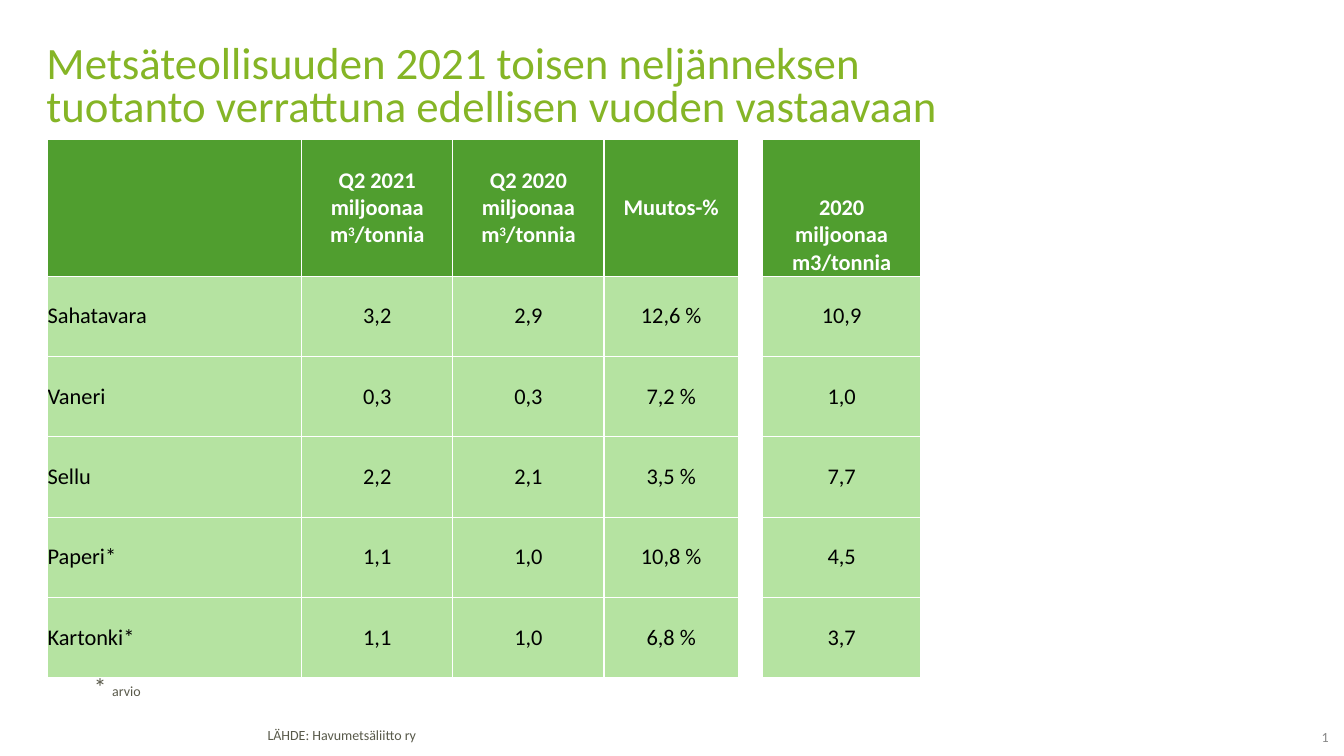
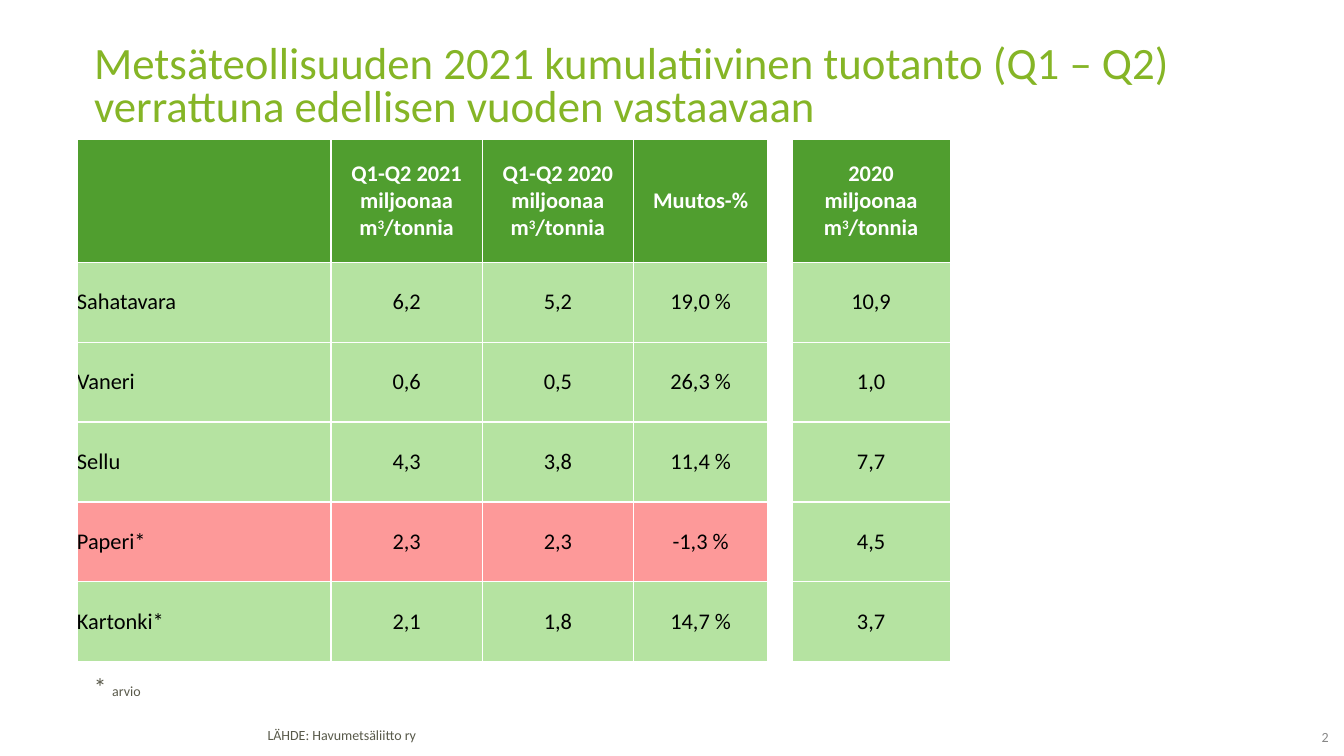
import pptx
import pptx.dml.color
import pptx.enum.text
import pptx.oxml
import pptx.oxml.ns
import pptx.util

Pt = pptx.util.Pt
RGBColor = pptx.dml.color.RGBColor
PP_ALIGN = pptx.enum.text.PP_ALIGN
ANCHOR = pptx.enum.text.MSO_ANCHOR

# Content
SOURCE = "LÄHDE: Havumetsäliitto ry"
PRODUCTS = ["Sahatavara", "Vaneri", "Sellu", "Paperi*", "Kartonki*"]
YEAR_2020 = ["10,9", "1,0", "7,7", "4,5", "3,7"]
UNIT = "miljoonaa\nm^3/tonnia"  # ^3 becomes a superscript

PAGES = [
    {
        "title": "Metsäteollisuuden 2021 toisen neljänneksen\v"
                 "tuotanto verrattuna edellisen vuoden vastaavaan",
        "title_left": 26,
        "table_left": 34,
        "header_heights": [39.4, 58.4],
        "row_height": 57.4,
        "headers": ["", f"Q2 2021\n{UNIT}", f"Q2 2020\n{UNIT}", "Muutos-%", "",
                    "2020\nmiljoonaa\nm3/tonnia"],
        "year_anchor": ANCHOR.BOTTOM,
        "current": ["3,2", "0,3", "2,2", "1,1", "1,1"],
        "previous": ["2,9", "0,3", "2,1", "1,0", "1,0"],
        "change": ["12,6 %", "7,2 %", "3,5 %", "10,8 %", "6,8 %"],
    },
    {
        "title": "Metsäteollisuuden 2021 kumulatiivinen tuotanto (Q1 – Q2) "
                 "verrattuna edellisen vuoden vastaavaan",
        "title_left": 60,
        "table_left": 55,
        "header_heights": [29.4, 58.4],
        "row_height": 57.1,
        "headers": ["", f"Q1-Q2 2021\n{UNIT}", f"Q1-Q2 2020\n{UNIT}", "Muutos-%", "",
                    f"2020\n{UNIT}"],
        "year_anchor": ANCHOR.MIDDLE,
        "current": ["6,2", "0,6", "4,3", "2,3", "2,1"],
        "previous": ["5,2", "0,5", "3,8", "2,3", "1,8"],
        "change": ["19,0 %", "26,3 %", "11,4 %", "-1,3 %", "14,7 %"],
    },
]

# Shared look
FONT = "Calibri"
TITLE_GREEN = RGBColor(0x85, 0xB5, 0x26)
HEADER_GREEN = RGBColor(0x50, 0x9E, 0x2F)
ROW_GREEN = RGBColor(0xB5, 0xE3, 0xA1)
DECLINE_RED = RGBColor(0xFD, 0x99, 0x99)
WHITE = RGBColor(0xFF, 0xFF, 0xFF)
BLACK = RGBColor(0, 0, 0)
SOURCE_GREY = RGBColor(0x58, 0x59, 0x4A)
NOTE_GREY = RGBColor(0x59, 0x59, 0x4A)
NUMBER_GREY = RGBColor(0x87, 0x87, 0x87)

COLUMN_WIDTHS = [181.5, 108, 108, 96, 13, 113]
SPACER, YEAR = 4, 5
TABLE_TOP = 99.5
TITLE_TOP, TITLE_WIDTH, TITLE_HEIGHT = 28, 842, 70.5


def set_font(font, size, color, bold=False):
    font.name, font.size, font.bold = FONT, Pt(size), bold
    font.color.rgb = color


def add_text(slide, left, top, width, height, text):
    box = slide.shapes.add_textbox(Pt(left), Pt(top), Pt(width), Pt(height))
    box.text_frame.word_wrap = True
    box.text_frame.text = text
    return box


def add_source(slide, layout):
    """Place the source line on the layout, so that every slide shows it."""
    source = add_text(slide, 184, 517, 517, 19.5, SOURCE)
    paragraph = source.text_frame.paragraphs[0]
    paragraph.line_spacing = 0.85
    set_font(paragraph.runs[0].font, 10, SOURCE_GREY)
    source.element.nvSpPr.cNvPr.set("id", "90")
    layout.shapes.element.append(source.element)


def add_title(slide, page):
    title = slide.shapes.title
    title.left, title.top = Pt(page["title_left"]), Pt(TITLE_TOP)
    title.width, title.height = Pt(TITLE_WIDTH), Pt(TITLE_HEIGHT)
    frame = title.text_frame
    frame.text = page["title"]
    frame.auto_size = pptx.enum.text.MSO_AUTO_SIZE.NONE
    frame.vertical_anchor = ANCHOR.MIDDLE
    paragraph = frame.paragraphs[0]
    paragraph.alignment = PP_ALIGN.LEFT
    paragraph.line_spacing = 0.8
    for run in paragraph.runs:
        set_font(run.font, 32, TITLE_GREEN)


def add_page_number(slide, number):
    box = add_text(slide, 911, 521.5, 38, 13.5, "")
    frame = box.text_frame
    frame.margin_left = frame.margin_right = frame.margin_top = 0
    frame.margin_bottom = Pt(3)
    frame.vertical_anchor = ANCHOR.MIDDLE
    paragraph = frame.paragraphs[0]
    paragraph.alignment = PP_ALIGN.RIGHT
    field = pptx.oxml.parse_xml(
        f'<a:fld {pptx.oxml.ns.nsdecls("a")} type="slidenum" '
        'id="{B6F15528-21DE-4FAA-801E-634DDDAF4B2B}">'
        f'<a:rPr lang="fi-FI" sz="1000"><a:solidFill><a:srgbClr val="{NUMBER_GREY}"/></a:solidFill>'
        f'<a:latin typeface="{FONT}"/></a:rPr><a:t>{number}</a:t></a:fld>')
    paragraph._p.append(field)


def add_note(slide):
    note = add_text(slide, 60, 476, 74, 29, "* ")
    paragraph = note.text_frame.paragraphs[0]
    paragraph.add_run().text = "arvio"
    for run, size in zip(paragraph.runs, (18, 10)):
        set_font(run.font, size, NOTE_GREY)


def fill_cell(cell, color):
    properties = cell._tc.get_or_add_tcPr()
    for side in ("lnL", "lnR", "lnT", "lnB"):
        properties.append(pptx.oxml.parse_xml(
            f'<a:{side} {pptx.oxml.ns.nsdecls("a")} w="12700"><a:solidFill>'
            f'<a:srgbClr val="{WHITE}"/></a:solidFill></a:{side}>'))
    cell.fill.solid()
    cell.fill.fore_color.rgb = color


def write_cell(cell, text, color, bold, alignment, anchor=ANCHOR.MIDDLE):
    cell.margin_left = cell.margin_right = cell.margin_top = cell.margin_bottom = 0
    cell.vertical_anchor = anchor
    base, power, rest = text.partition("^3")
    cell.text_frame.text = base
    if power:
        last = cell.text_frame.paragraphs[-1]
        exponent = last.add_run()
        exponent.text = "3"
        exponent.font._element.set("baseline", "30000")
        last.add_run().text = rest
    for paragraph in cell.text_frame.paragraphs:
        paragraph.alignment = alignment
        for run in paragraph.runs:
            set_font(run.font, 16, color, bold)


def add_production_table(slide, page):
    heights = page["header_heights"] + [page["row_height"]] * len(PRODUCTS)
    table = slide.shapes.add_table(
        len(heights), len(COLUMN_WIDTHS), Pt(page["table_left"]), Pt(TABLE_TOP),
        Pt(sum(COLUMN_WIDTHS)), Pt(sum(heights))).table
    table.first_row = table.horz_banding = False
    for column, width in zip(table.columns, COLUMN_WIDTHS):
        column.width = Pt(width)
    for row, height in zip(table.rows, heights):
        row.height = Pt(height)

    # Header spans two rows, except in the spacer column
    for col, header in enumerate(page["headers"]):
        for row in (0, 1):
            fill_cell(table.cell(row, col), WHITE if col == SPACER else HEADER_GREEN)
        if col != SPACER:
            table.cell(0, col).merge(table.cell(1, col))
        if header:
            anchor = page["year_anchor"] if col == YEAR else ANCHOR.MIDDLE
            write_cell(table.cell(0, col), header, WHITE, True, PP_ALIGN.CENTER, anchor)

    # Product rows; a decline turns the quarter figures red
    spacers = [""] * len(PRODUCTS)
    records = zip(PRODUCTS, page["current"], page["previous"], page["change"],
                  spacers, YEAR_2020)
    for row, record in enumerate(records, start=2):
        declined = record[3].startswith("-")
        for col, value in enumerate(record):
            cell = table.cell(row, col)
            if col == SPACER:
                fill_cell(cell, WHITE)
                continue
            fill_cell(cell, DECLINE_RED if declined and col < SPACER else ROW_GREEN)
            write_cell(cell, value, BLACK, False,
                       PP_ALIGN.CENTER if col else PP_ALIGN.LEFT)


def main():
    deck = pptx.Presentation()
    deck.slide_width, deck.slide_height = Pt(960), Pt(540)
    layout = deck.slide_layouts[5]
    for number, page in enumerate(PAGES, start=1):
        slide = deck.slides.add_slide(layout)
        if number == 1:
            add_source(slide, layout)
        add_title(slide, page)
        add_page_number(slide, number)
        add_production_table(slide, page)
        add_note(slide)
    deck.save("out.pptx")


if __name__ == "__main__":
    main()
